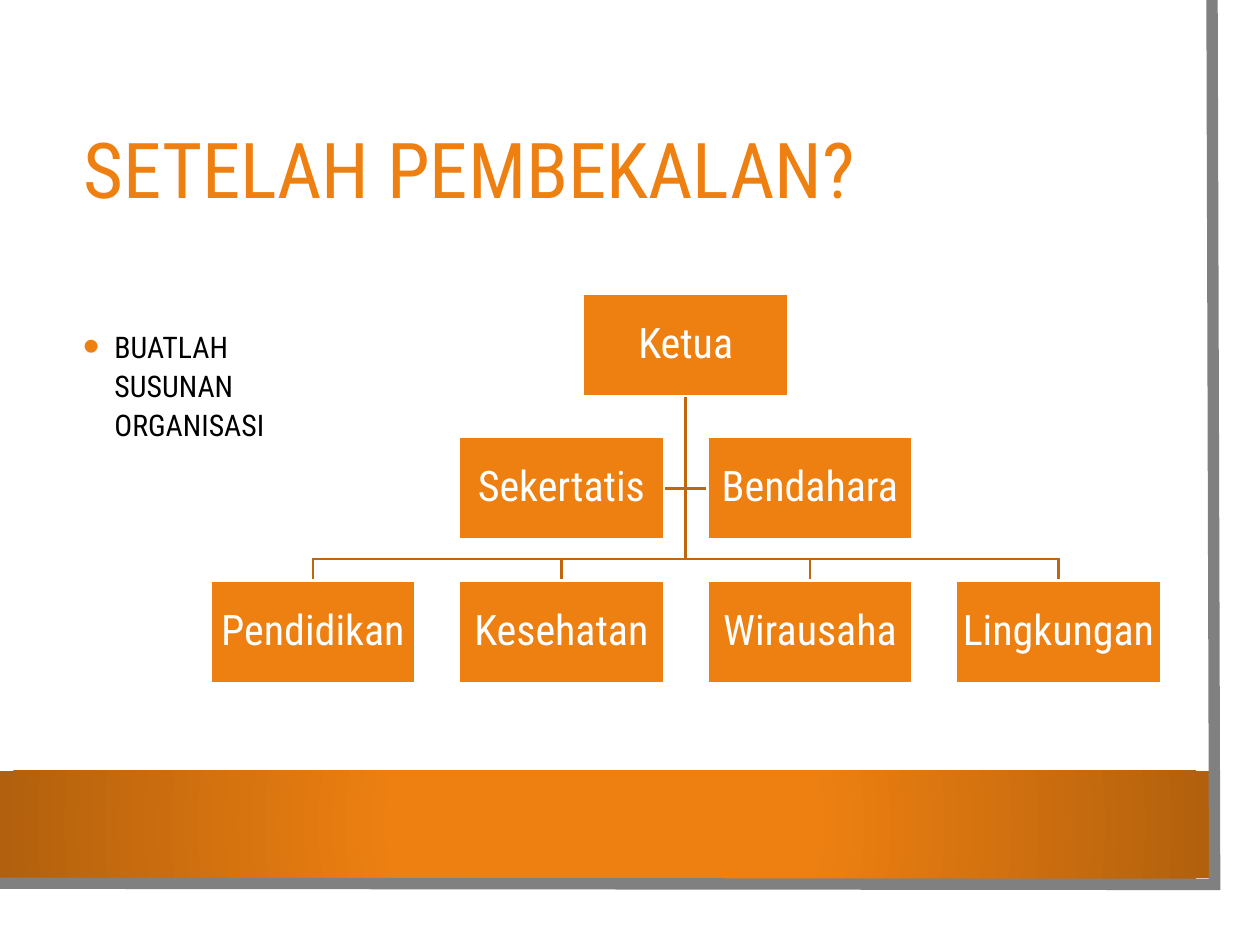
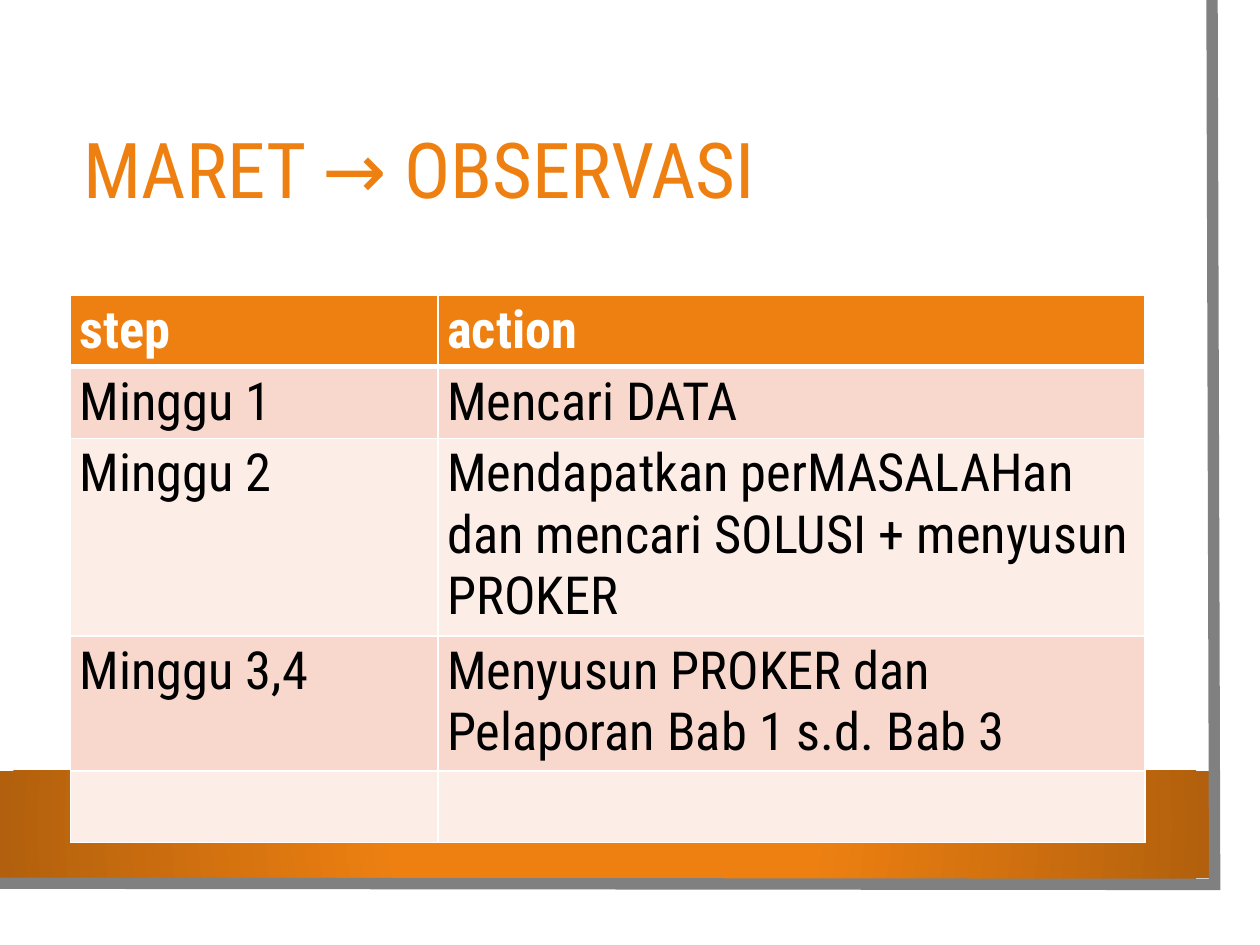
"""Build two slides: an organisation chart and the March observation schedule."""
from lxml import etree
from pptx import Presentation
from pptx.dml.color import RGBColor
from pptx.enum.shapes import MSO_SHAPE
from pptx.enum.text import MSO_ANCHOR, PP_ALIGN
from pptx.oxml import parse_xml
from pptx.oxml.ns import nsdecls, qn
from pptx.util import Pt

RECTANGLE = MSO_SHAPE.RECTANGLE
MIDDLE = MSO_ANCHOR.MIDDLE
TOP = MSO_ANCHOR.TOP
LEFT = PP_ALIGN.LEFT
CENTER = PP_ALIGN.CENTER

ORANGE = RGBColor(0xEE, 0x80, 0x11)
DARK_ORANGE = RGBColor(0xB2, 0x60, 0x0D)
CONNECTOR_ORANGE = RGBColor(0xBF, 0x67, 0x0E)
GRAY = RGBColor(0x80, 0x80, 0x80)
WHITE = RGBColor(0xFF, 0xFF, 0xFF)
BLACK = RGBColor(0, 0, 0)
ROW_TINTS = (RGBColor(0xF8, 0xD8, 0xCC), RGBColor(0xFC, 0xED, 0xE7))
FONT = "Roboto Condensed"

ORGANISATION_TITLE = "SETELAH PEMBEKALAN?"
INSTRUCTION = "BUATLAH SUSUNAN ORGANISASI"
LEADER = "Ketua"
ASSISTANTS = ["Sekertatis", "Bendahara"]
DIVISIONS = ["Pendidikan", "Kesehatan", "Wirausaha", "Lingkungan"]

SCHEDULE_TITLE = "MARET → OBSERVASI"
SCHEDULE = [
    ("step", "action"),
    ("Minggu 1", "Mencari DATA"),
    ("Minggu 2", "Mendapatkan perMASALAHan dan mencari SOLUSI + menyusun PROKER"),
    ("Minggu 3,4", "Menyusun PROKER dan Pelaporan Bab 1 s.d. Bab 3"),
    ("", ""),
]
COLUMN_WIDTHS = (210, 404)
ROW_HEIGHTS = (41, 41, 113, 77, 41)

CONTENT_LEFT, CONTENT_WIDTH = 40.3, 614
BOX_WIDTH, BOX_HEIGHT = 117.3, 58.5
CHART_LEFT, CHART_TOP = 120.2, 167.8
COLUMN_PITCH, ROW_PITCH = 142, 82
BUS_RISE = 12.3


def write_text(frame, text, size, color, bold=False, align=LEFT, anchor=MIDDLE,
               spacing=1.0, margins=(7.2, 3.6), bullet=None):
    """Fill a text frame or table cell with one formatted paragraph."""
    holder = getattr(frame, "text_frame", frame)
    holder.word_wrap = True
    frame.vertical_anchor = anchor
    frame.margin_left = frame.margin_right = Pt(margins[0])
    frame.margin_top = frame.margin_bottom = Pt(margins[1])
    paragraph = holder.paragraphs[0]
    paragraph.alignment = align
    paragraph.line_spacing = spacing
    if bullet:
        add_bullet(paragraph, bullet)
    run = paragraph.add_run()
    run.text = text
    run.font.name = FONT
    run.font.size = Pt(size)
    run.font.bold = bold
    run.font.color.rgb = color


def add_bullet(paragraph, color):
    """Give a paragraph a large coloured bullet and a hanging indent."""
    properties = paragraph._p.get_or_add_pPr()
    properties.set("marL", str(Pt(18)))
    properties.set("indent", str(-Pt(18)))
    bullet_color = etree.SubElement(properties, qn("a:buClr"))
    etree.SubElement(bullet_color, qn("a:srgbClr"), val=str(color))
    etree.SubElement(properties, qn("a:buSzPct"), val="160000")
    etree.SubElement(properties, qn("a:buFont"), typeface="Arial")
    etree.SubElement(properties, qn("a:buChar"), char="•")


def add_rectangle(slide, left, top, width, height, fill, line=None):
    """Add a flat rectangle with an optional outline."""
    shape = slide.shapes.add_shape(RECTANGLE, Pt(left), Pt(top), Pt(width), Pt(height))
    shape.shadow.inherit = False
    shape.fill.solid()
    shape.fill.fore_color.rgb = fill
    if line is None:
        shape.line.fill.background()
    else:
        shape.line.color.rgb = line
        shape.line.width = Pt(1.5)
    return shape


def add_polyline(slide, points, color, width):
    """Add an open, unfilled line through the points."""
    points = [(Pt(x), Pt(y)) for x, y in points]
    builder = slide.shapes.build_freeform(*points[0])
    builder.add_line_segments(points[1:], close=False)
    shape = builder.convert_to_shape()
    shape.shadow.inherit = False
    shape.fill.background()
    shape.line.color.rgb = color
    shape.line.width = Pt(width)
    outline = shape._element.spPr.find(qn("a:ln"))
    etree.SubElement(outline, qn("a:miter"), lim="800000")
    return shape


def add_backdrop(slide):
    """Draw the page, band and frame, and share them through the slide layout."""
    page = add_rectangle(slide, 0, 0, 708, 523.5, WHITE)
    band = add_rectangle(slide, 0, 440.6, 691.2, 61.4, ORANGE)
    gradient = parse_xml(
        f'<a:gradFill {nsdecls("a")} rotWithShape="1"><a:gsLst>'
        f'<a:gs pos="34000"><a:srgbClr val="{ORANGE}"/></a:gs>'
        f'<a:gs pos="100000"><a:srgbClr val="{DARK_ORANGE}"/></a:gs></a:gsLst>'
        '<a:path path="circle"><a:fillToRect l="50000" t="50000" r="50000" b="50000"/>'
        '</a:path></a:gradFill>')
    properties = band._element.spPr
    properties.replace(properties.find(qn("a:solidFill")), gradient)
    frame = add_polyline(slide, [(692.6, 0), (694.1, 505.4), (-1.4, 504.7)], GRAY, 6.5)
    for shape in (page, band, frame):
        slide.slide_layout.shapes._spTree.append(shape._element)


def add_titled_slide(presentation, title):
    """Add a title-only slide with the shared title style."""
    slide = presentation.slides.add_slide(presentation.slide_layouts[5])
    shape = slide.shapes.title
    shape.left, shape.top = Pt(CONTENT_LEFT), Pt(54)
    shape.width, shape.height = Pt(CONTENT_WIDTH), Pt(90.7)
    write_text(shape.text_frame, title, 44, ORANGE, spacing=0.9)
    return slide


def add_organisation(slide):
    """Draw the organisation chart, connectors first."""
    middle_column = (len(DIVISIONS) - 1) / 2
    boxes = [(LEADER, middle_column, 0)]
    boxes += [(name, column, 2) for column, name in enumerate(DIVISIONS)]
    boxes += [(name, column, 1) for column, name in enumerate(ASSISTANTS, 1)]
    center = CHART_LEFT + middle_column * COLUMN_PITCH + BOX_WIDTH / 2
    start = (center, CHART_TOP + BOX_HEIGHT)
    placed = [(name, CHART_LEFT + column * COLUMN_PITCH, CHART_TOP + row * ROW_PITCH, row)
              for name, column, row in boxes]
    for name, left, top, row in placed:
        if row == 1:
            side = left if left > center else left + BOX_WIDTH
            level = top + BOX_HEIGHT / 2
            route = [start, (center, level), (side, level)]
        elif row == 2:
            middle, bus = left + BOX_WIDTH / 2, top - BUS_RISE
            route = [start, (center, bus), (middle, bus), (middle, top)]
        else:
            continue
        add_polyline(slide, route, CONNECTOR_ORANGE, 1.5)
    for name, left, top, row in placed:
        box = add_rectangle(slide, left, top, BOX_WIDTH, BOX_HEIGHT, ORANGE, WHITE)
        write_text(box.text_frame, name, 24, WHITE, align=CENTER, spacing=0.9,
                   margins=(1.2, 1.2))


def set_borders(cell, bottom_width):
    """Draw white borders around a table cell."""
    properties = cell._tc.get_or_add_tcPr()
    widths = {"lnL": 1, "lnR": 1, "lnT": 1, "lnB": bottom_width}
    for position, (side, width) in enumerate(widths.items()):
        properties.insert(position, parse_xml(
            f'<a:{side} {nsdecls("a")} w="{Pt(width)}"><a:solidFill>'
            f'<a:srgbClr val="{WHITE}"/></a:solidFill></a:{side}>'))


def add_schedule(slide):
    """Add the table of weekly steps."""
    table = slide.shapes.add_table(
        len(SCHEDULE), len(COLUMN_WIDTHS), Pt(CONTENT_LEFT), Pt(168.5),
        Pt(sum(COLUMN_WIDTHS)), Pt(sum(ROW_HEIGHTS))).table
    for column, width in zip(table.columns, COLUMN_WIDTHS):
        column.width = Pt(width)
    for number, (row, height) in enumerate(zip(table.rows, ROW_HEIGHTS)):
        row.height = Pt(height)
        header = number == 0
        for cell, text in zip(row.cells, SCHEDULE[number]):
            cell.fill.solid()
            cell.fill.fore_color.rgb = ORANGE if header else ROW_TINTS[(number - 1) % 2]
            set_borders(cell, 3 if header else 1)
            if text:
                write_text(cell, text, 30, WHITE if header else BLACK, bold=header,
                           anchor=TOP, margins=(5.3, 2.7))


def main():
    """Build and save the presentation."""
    presentation = Presentation()
    presentation.slide_width, presentation.slide_height = Pt(720), Pt(540)

    slide = add_titled_slide(presentation, ORGANISATION_TITLE)
    add_backdrop(slide)
    instruction = slide.shapes.add_textbox(Pt(CONTENT_LEFT), Pt(189.4), Pt(165), Pt(60))
    write_text(instruction.text_frame, INSTRUCTION, 17, BLACK, spacing=1.1, bullet=ORANGE)
    add_organisation(slide)

    slide = add_titled_slide(presentation, SCHEDULE_TITLE)
    add_schedule(slide)
    presentation.save("out.pptx")


if __name__ == "__main__":
    main()
